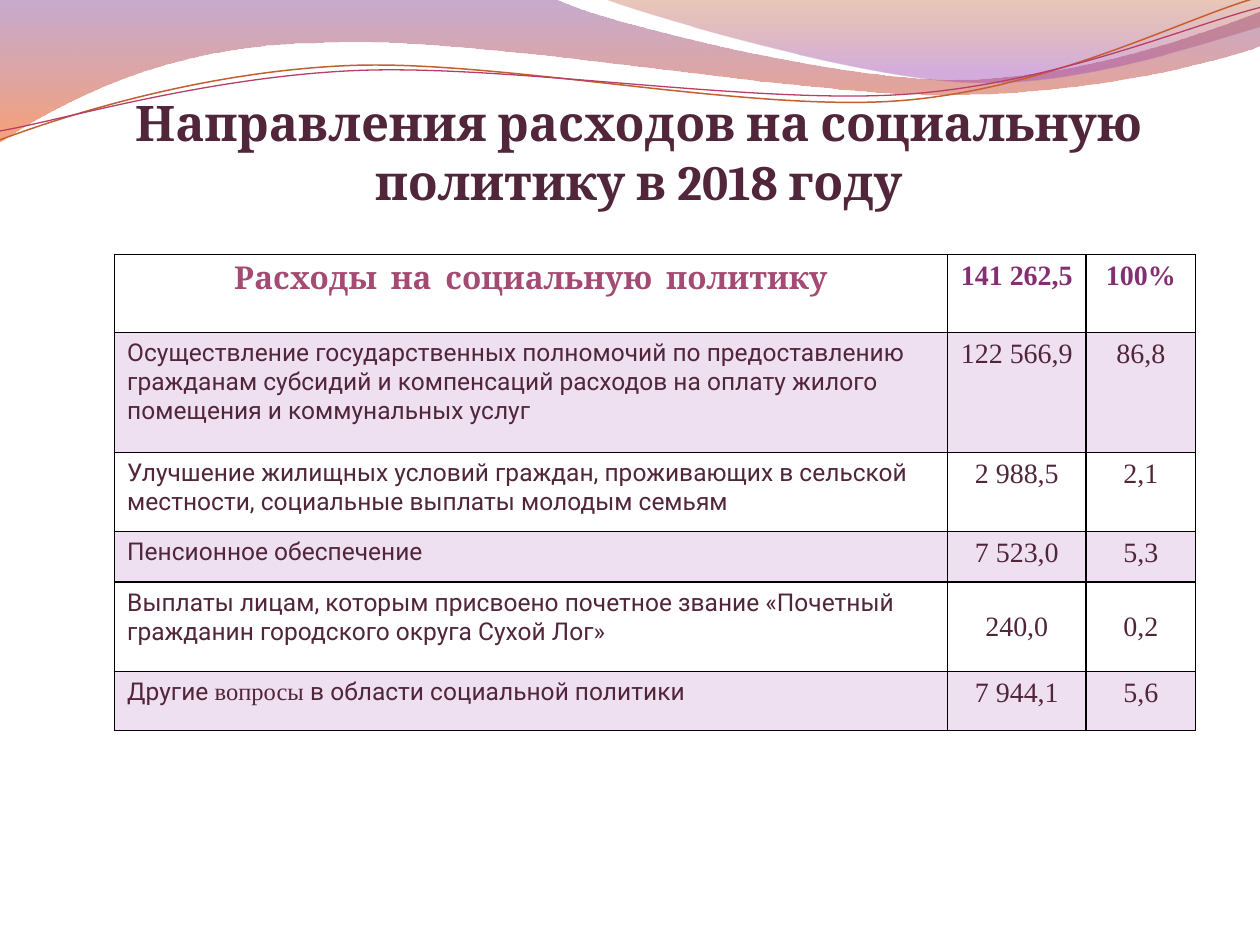
from math import cos, radians, sin

from lxml import etree
from pptx import Presentation
from pptx.dml.color import RGBColor
from pptx.enum.text import MSO_ANCHOR, PP_ALIGN
from pptx.oxml.ns import qn
from pptx.util import Inches, Pt

CENTER, LEFT = PP_ALIGN.CENTER, PP_ALIGN.LEFT
MIDDLE, TOP = MSO_ANCHOR.MIDDLE, MSO_ANCHOR.TOP
COLORS = {
    "text": "51253A", "heading": "A34B73", "total": "852F73", "band": "AC66BB",
    "border": "000000", "plum": "834591", "orange": "F35307", "rust": "B74915",
    "violet": "A14BB4", "copper": "C45F30", "rose": "B83D68",
}
HEADING = {"name": "Cambria", "size": Pt(18), "bold": True, "color": "heading"}
TITLE = {**HEADING, "size": Pt(28), "color": "text"}
NUMBER = {"name": "Times New Roman", "size": Pt(16), "bold": False, "color": "text"}
TOTAL = {**NUMBER, "bold": True, "color": "total"}
LABEL = {**NUMBER, "name": "Roboto", "size": Pt(14)}
SERIF_LABEL = {**LABEL, "name": "Times New Roman"}

TILT = -2.7
WAVES = [
    {"start": (0, -0.01),
     "segments": [[(4.4, -0.01)],
                  [(4.76, 0.17), (6.64, 0.63), (7.58, 0.63)],
                  [(8.53, 0.63), (9.58, 0.26), (10, 0.09)],
                  [(10.01, 0.36)],
                  [(9.83, 0.44), (8.7, 0.76), (7.46, 0.75)],
                  [(6.22, 0.75), (3.82, 0.28), (2.57, 0.34)],
                  [(1.29, 0.35), (0.46, 0.83), (-0.01, 1.13)]],
     "stops": [(0, "plum", 45), (1, "orange", 55)]},
    {"start": (4.79, -0.01),
     "segments": [[(5.09, 0.11), (6.82, 0.62), (7.69, 0.65)],
                  [(8.56, 0.69), (9.61, 0.32), (10, 0.21)],
                  [(10, 0)]],
     "stops": [(0, "rust", 30), (0.8, "violet", 45)]},
    {"start": (0, 1.11),
     "segments": [[(0.48, 0.93), (1.58, 0.57), (2.77, 0.52)],
                  [(3.95, 0.47), (5.93, 0.89), (7.13, 0.8)],
                  [(8.33, 0.71), (9.38, 0.15), (9.98, -0.02)]],
     "line": ("copper", 0.85), "center": (4.99, 0.58)},
    {"start": (0, 1.04),
     "segments": [[(0.47, 0.96), (1.64, 0.61), (2.83, 0.56)],
                  [(4.03, 0.51), (5.97, 0.83), (7.17, 0.75)],
                  [(8.36, 0.67), (9.41, 0.21), (10, 0.06)]],
     "line": ("rose", 0.75), "center": (5, 0.59)},
]

COLUMNS = [6.61, 1.1, 0.87]
ROWS = [
    (0.62, [("Расходы  на  социальную  политику", HEADING)], "141 262,5", "100%"),
    (0.95, [("Осуществление государственных полномочий по предоставлению гражданам "
             "субсидий и компенсаций расходов на оплату жилого  помещения и "
             "коммунальных услуг", LABEL)], "122 566,9", "86,8"),
    (0.63, [("Улучшение жилищных условий граждан, проживающих в сельской местности, "
             "социальные выплаты молодым семьям", LABEL)], "2 988,5", "2,1"),
    (0.4, [("Пенсионное обеспечение", LABEL)], "7 523,0", "5,3"),
    (0.71, [("Выплаты лицам, которым присвоено почетное звание «Почетный гражданин "
             "городского округа Сухой Лог»", LABEL)], "240,0", "0,2"),
    (0.47, [("Другие ", LABEL), ("вопросы", SERIF_LABEL),
            (" в области социальной политики", LABEL)], "7 944,1", "5,6"),
]
HONORARY_ROW = 4


def rgb(name):
    return RGBColor.from_string(COLORS[name])


def set_alphas(element, percents):
    for clr, percent in zip(element.iter(qn("a:srgbClr")), percents):
        etree.SubElement(clr, qn("a:alpha"), val=str(percent * 1000))


def write(p, runs, align):
    p.alignment = align
    for text, style in runs:
        r = p.add_run()
        r.text = text
        for key, value in style.items():
            if key == "color":
                r.font.color.rgb = rgb(value)
            else:
                setattr(r.font, key, value)


def rotate(point, center, degrees):
    angle = radians(degrees)
    dx, dy = point[0] - center[0], point[1] - center[1]
    return (center[0] + dx * cos(angle) - dy * sin(angle),
            center[1] + dx * sin(angle) + dy * cos(angle))


def bend(sp, segments):
    lines = iter(list(sp._element.iter(qn("a:lnTo"))))
    for segment in segments:
        first, *rest = [next(lines) for _ in segment]
        if rest:
            curve = etree.Element(qn("a:cubicBezTo"))
            first.addprevious(curve)
            for line in (first, *rest):
                curve.append(line[0])
                line.getparent().remove(line)


def add_wave(slide, left, top, wave):
    points = [wave["start"]] + [point for segment in wave["segments"] for point in segment]
    if "center" in wave:
        points = [rotate(point, wave["center"], -TILT) for point in points]
    points = [(Inches(left + x), Inches(top + y)) for x, y in points]
    builder = slide.shapes.build_freeform(*points[0])
    builder.add_line_segments(points[1:], close="stops" in wave)
    sp = builder.convert_to_shape()
    bend(sp, wave["segments"])
    sp.shadow.inherit = False
    if "stops" in wave:
        sp.line.fill.background()
        sp.fill.gradient()
        sp.fill.gradient_angle = 270
        for stop, (position, color, _) in zip(sp.fill.gradient_stops, wave["stops"]):
            stop.position = position
            stop.color.rgb = rgb(color)
        set_alphas(sp._element.spPr, [alpha for _, _, alpha in wave["stops"]])
    else:
        color, width = wave["line"]
        sp.rotation = TILT
        sp.fill.background()
        sp.line.color.rgb = rgb(color)
        sp.line.width = Pt(width)


def add_title(slide, left, top, width, height):
    box = slide.shapes.add_textbox(Inches(left), Inches(top), Inches(width), Inches(height))
    tf = box.text_frame
    tf.word_wrap = True
    tf.vertical_anchor = MIDDLE
    write(tf.paragraphs[0],
          [("Направления расходов на социальную политику в 2018 году", TITLE)], CENTER)


def add_borders(cell):
    tc_pr = cell._tc.get_or_add_tcPr()
    for i, side in enumerate(("lnL", "lnR", "lnT", "lnB")):
        ln = etree.Element(qn(f"a:{side}"), w=str(Pt(1)))
        fill = etree.SubElement(ln, qn("a:solidFill"))
        etree.SubElement(fill, qn("a:srgbClr"), val=COLORS["border"])
        tc_pr.insert(i, ln)


def add_expenses(slide, left, top, width, height):
    table = slide.shapes.add_table(
        len(ROWS), len(COLUMNS), Inches(left), Inches(top),
        Inches(width), Inches(height)).table
    table.first_row = table.horz_banding = False
    for column, col_width in zip(table.columns, COLUMNS):
        column.width = Inches(col_width)
    for i, (row_height, label, amount, share) in enumerate(ROWS):
        table.rows[i].height = Inches(row_height)
        number = NUMBER if i else TOTAL
        for j, runs in enumerate((label, [(amount, number)], [(share, number)])):
            cell = table.cell(i, j)
            write(cell.text_frame.paragraphs[0], runs, LEFT if i and not j else CENTER)
            cell.vertical_anchor = MIDDLE if i == HONORARY_ROW and j else TOP
            if i % 2:
                cell.fill.solid()
                cell.fill.fore_color.rgb = rgb("band")
                set_alphas(cell._tc.tcPr, [20])
            else:
                cell.fill.background()
            add_borders(cell)


def main():
    prs = Presentation()
    prs.slide_width, prs.slide_height = Inches(10), Inches(7.5)
    slide = prs.slides.add_slide(prs.slide_layouts[6])
    for wave in WAVES:
        add_wave(slide, 0, 0, wave)
    add_title(slide, 0.58, 0.69, 8.98, 1.02)
    add_expenses(slide, 0.91, 2.02, 8.58, 3.78)
    prs.save("out.pptx")


if __name__ == "__main__":
    main()
